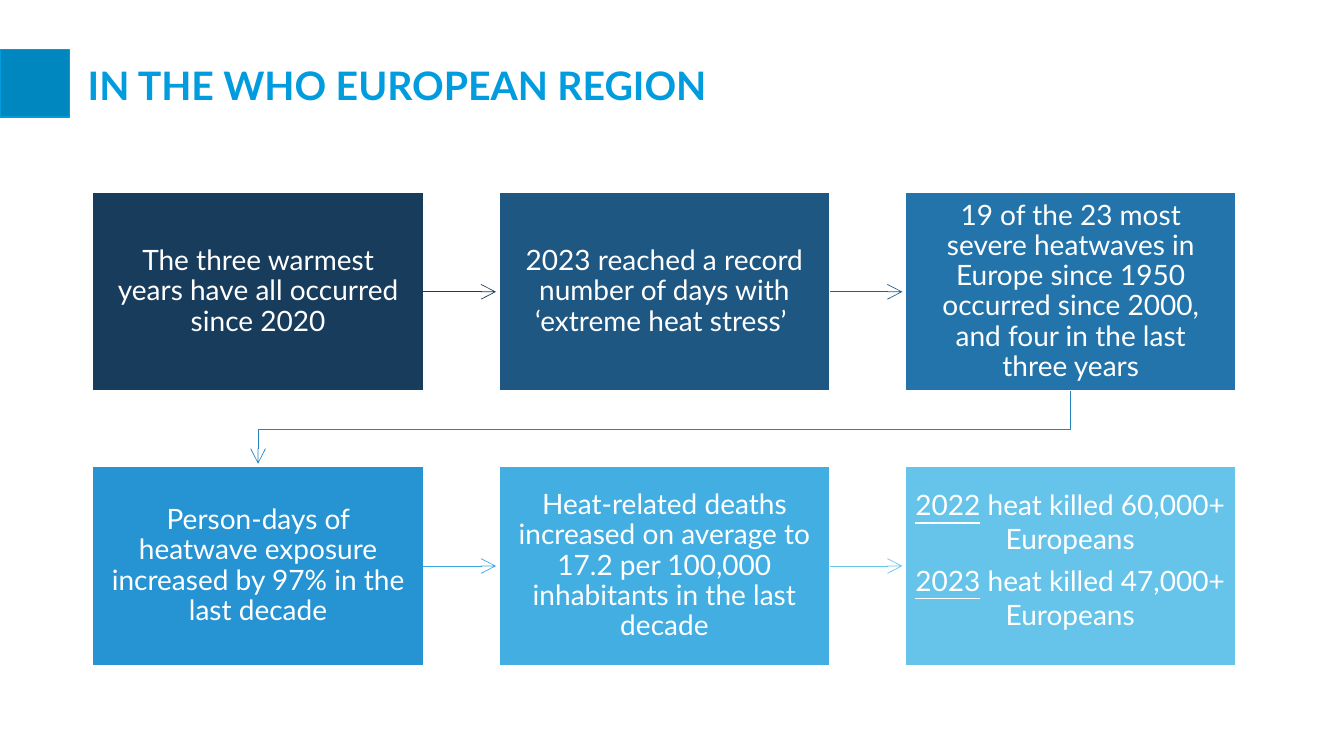
import pptx
import pptx.dml.color
import pptx.enum.shapes
import pptx.enum.text
import pptx.oxml
import pptx.oxml.ns
import pptx.util
from pptx.util import Inches

RGBColor = pptx.dml.color.RGBColor
Anchor = pptx.enum.text.MSO_ANCHOR
Align = pptx.enum.text.PP_ALIGN

WHITE = RGBColor(0xFF, 0xFF, 0xFF)
SKY = RGBColor(0x00, 0x9C, 0xDE)
ACCENT = RGBColor(0x00, 0x87, 0xBF)
TURN_LINE = RGBColor(0x25, 0x83, 0xBE)
CARD_FILLS = [
    RGBColor(0x18, 0x3C, 0x5C), RGBColor(0x1E, 0x57, 0x82), RGBColor(0x23, 0x74, 0xAA),
    RGBColor(0x26, 0x94, 0xD3), RGBColor(0x43, 0xAE, 0xE2), RGBColor(0x66, 0xC4, 0xEB),
]
# Arrow to the right of each card in the first two columns
ARROW_LINES = {
    0: RGBColor(0x18, 0x3C, 0x5C), 1: RGBColor(0x20, 0x5E, 0x8C),
    3: RGBColor(0x3A, 0xA8, 0xDF), 4: RGBColor(0x66, 0xC4, 0xEB),
}
FACTS = [
    "The three warmest years have all occurred since 2020",
    "2023 reached a record number of days with ‘extreme heat stress’ ",
    "19 of the 23 most severe heatwaves in Europe since 1950 occurred since 2000, "
    "and four in the last three years",
    "Person-days of heatwave exposure increased by 97% in the last decade",
    "Heat-related deaths increased on average to 17.2 per 100,000 inhabitants "
    "in the last decade",
]
DEATHS = [("2022", " heat killed 60,000+ Europeans"), ("2023", " heat killed 47,000+ Europeans")]

COLUMNS = 3
LEFT, TOP = 0.92, 1.91
CARD_WIDTH, CARD_HEIGHT = 3.28, 1.97
COLUMN_STEP, ROW_STEP = 4.03, 2.72


class Page:
    font_name = "Lato"

    def __init__(self, deck):
        self.shapes = deck.slides.add_slide(deck.slide_layouts[6]).shapes

    def style(self, para, size, color, bold=False):
        para.font.name = self.font_name
        para.font.size = pptx.util.Pt(size)
        para.font.color.rgb = color
        para.font.bold = bold

    def set_frame(self, frame, insets):
        frame.word_wrap = True
        frame.vertical_anchor = Anchor.MIDDLE
        (frame.margin_left, frame.margin_top,
         frame.margin_right, frame.margin_bottom) = map(Inches, insets)

    def title(self, text, left, top, width, height):
        box = self.shapes.add_textbox(*map(Inches, (left, top, width, height)))
        self.set_frame(box.text_frame, (0, 0.01, 0, 0))
        para = box.text_frame.paragraphs[0]
        para.text = text
        self.style(para, 28, SKY, bold=True)

    def rectangle(self, left, top, width, height, fill, line):
        box = self.shapes.add_shape(pptx.enum.shapes.MSO_SHAPE.RECTANGLE,
                                    *map(Inches, (left, top, width, height)))
        box.shadow.inherit = False
        box.fill.solid()
        box.fill.fore_color.rgb = fill
        box.line.color.rgb = line
        box.line.width = pptx.util.Pt(1)
        return box

    def fact_card(self, left, top, fill, text):
        frame = self.rectangle(left, top, CARD_WIDTH, CARD_HEIGHT, fill, WHITE).text_frame
        self.set_frame(frame, (0.16, 0.17, 0.16, 0.17))
        para = frame.paragraphs[0]
        para.text = text
        para.alignment = Align.CENTER
        para.line_spacing = 0.9
        self.style(para, 20, WHITE)

    def deaths_card(self, left, top, fill, entries):
        """Card with one paragraph per year, the year underlined."""
        frame = self.rectangle(left, top, CARD_WIDTH, CARD_HEIGHT, fill, WHITE).text_frame
        self.set_frame(frame, (0.06, 0.21, 0.07, 0.05))
        frame.vertical_anchor = Anchor.TOP
        for index, (year, toll) in enumerate(entries):
            para = frame.add_paragraph() if index else frame.paragraphs[0]
            para.alignment = Align.CENTER
            para.space_after = pptx.util.Pt(6)
            self.style(para, 20, WHITE)
            span = para.add_run()
            span.text = year
            span.font.underline = True
            para.add_run().text = toll

    def finish_arrow(self, shape, color):
        """Set the thin line, open arrowhead and no shadow."""
        shape.line.color.rgb = color
        shape.line.width = pptx.util.Pt(0.5)
        tail = pptx.oxml.parse_xml('<a:tailEnd %s type="arrow" w="lg" len="lg"/>'
                                   % pptx.oxml.ns.nsdecls("a"))
        shape.line._get_or_add_ln().append(tail)

    def arrow(self, left, right, middle, color):
        line = self.shapes.add_connector(pptx.enum.shapes.MSO_CONNECTOR.STRAIGHT,
                                         *map(Inches, (left, middle, right, middle)))
        self.finish_arrow(line, color)
        line._element.spPr.append(
            pptx.oxml.parse_xml("<a:effectLst %s/>" % pptx.oxml.ns.nsdecls("a")))

    def bent_arrow(self, points, color):
        start, *rest = [(Inches(x), Inches(y)) for x, y in points]
        builder = self.shapes.build_freeform(*start)
        builder.add_line_segments(rest, close=False)
        line = builder.convert_to_shape()
        line.fill.background()
        line.shadow.inherit = False
        self.finish_arrow(line, color)


def main():
    deck = pptx.Presentation()
    deck.slide_width = Inches(13.33)
    deck.slide_height = Inches(7.5)
    page = Page(deck)

    page.title("IN THE WHO EUROPEAN REGION", 0.87, 0.6, 8.65, 0.48)
    page.rectangle(0, 0.49, 0.69, 0.67, ACCENT, SKY)

    for index, fill in enumerate(CARD_FILLS):
        row, column = divmod(index, COLUMNS)
        left = LEFT + column * COLUMN_STEP
        top = TOP + row * ROW_STEP
        if index < len(FACTS):
            page.fact_card(left, top, fill, FACTS[index])
        else:
            page.deaths_card(left, top, fill, DEATHS)
        if index in ARROW_LINES:
            right = left + CARD_WIDTH
            page.arrow(right, right + 0.72, top + CARD_HEIGHT / 2, ARROW_LINES[index])

    first_center = LEFT + CARD_WIDTH / 2
    last_center = first_center + (COLUMNS - 1) * COLUMN_STEP
    page.bent_arrow([(last_center, 3.88), (last_center, 4.26),
                     (first_center, 4.26), (first_center, 4.6)], TURN_LINE)

    deck.save("out.pptx")


if __name__ == "__main__":
    main()
